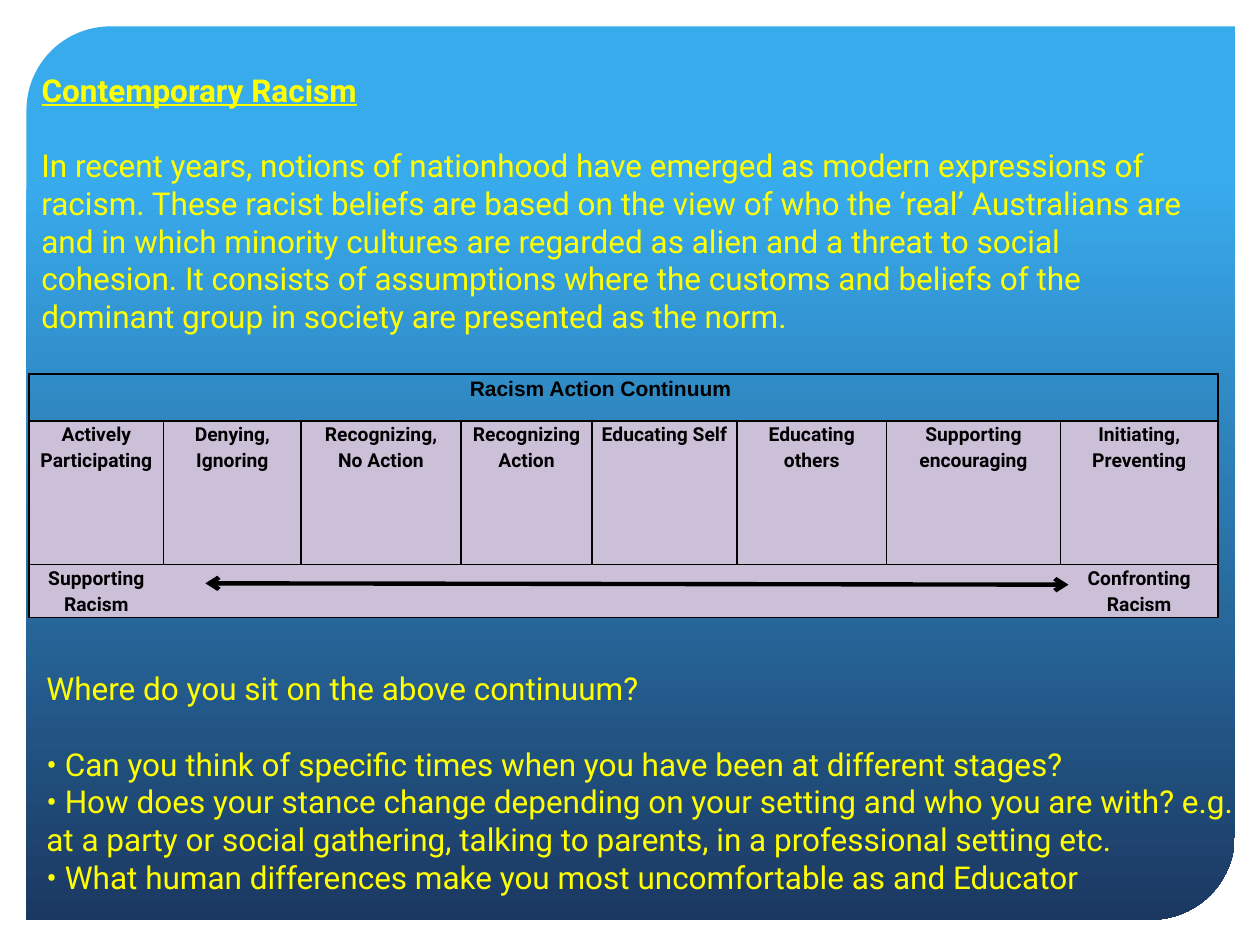
from lxml.etree import SubElement
from pptx import Presentation
from pptx.dml.color import RGBColor
from pptx.enum.shapes import MSO_CONNECTOR, MSO_SHAPE
from pptx.enum.text import MSO_ANCHOR, MSO_AUTO_SIZE, PP_ALIGN
from pptx.oxml.ns import qn
from pptx.util import Inches, Pt

COLORS = {"top": "38ABED", "bottom": "1B3861", "text": "FFFF00",
          "cell": "CCC0D9", "ink": "000000"}
WIDTH, HEIGHT = Inches(10), Inches(7.5)
NO_STYLE = "{2D5ABB26-0587-4C30-8999-92F81FD0307C}"

INTRO = ["In recent years, notions of nationhood have emerged as modern expressions of "
         "racism. These racist beliefs are based on the view of who the ‘real’ Australians "
         "are and in which minority cultures are regarded as alien and a threat to social "
         "cohesion. It consists of assumptions where the customs and beliefs of the "
         "dominant group in society are presented as the norm."]
QUESTIONS = ["Where do you sit on the above continuum?",
             "• Can you think of specific times when you have been at different stages?",
             "• How does your stance change depending on your setting and who you are with? "
             "e.g. at a party or social gathering, talking to parents, in a professional "
             "setting etc.",
             "• What human differences make you most uncomfortable as and Educator"]

# Column widths and row heights, in percent of the slide
COLUMNS = [10.7, 10.9, 12.7, 10.4, 9.1, 2.4, 1.4, 3.7, 6.4, 13.8, 12.5]
ROWS = [4.93, 15.2, 5.6]
# (first column, last column, text)
STAGES = [(0, 0, "Actively\nParticipating"), (1, 1, "Denying,\nIgnoring"),
          (2, 2, "Recognizing,\nNo Action"), (3, 3, "Recognizing Action"),
          (4, 5, "Educating Self"), (6, 8, "Educating others"),
          (9, 9, "Supporting encouraging"), (10, 10, "Initiating,\nPreventing")]


def color(name):
    return RGBColor.from_string(COLORS[name])


def px(share):
    """Percent of the slide width."""
    return round(WIDTH * share / 100)


def py(share):
    """Percent of the slide height."""
    return round(HEIGHT * share / 100)


def box(x, y, w, h):
    return px(x), py(y), px(w), py(h)


def style_runs(p, size, name, font="Roboto", bold=False, underline=False):
    for r in p.runs:
        r.font.size, r.font.name = Pt(size), font
        r.font.bold, r.font.underline = bold, underline
        r.font.color.rgb = color(name)


def add_panel(s):
    sp = s.shapes.add_shape(MSO_SHAPE.ROUND_2_DIAG_RECTANGLE, *box(2.1, 2.8, 95.9, 94.53))
    sp.adjustments[0], sp.adjustments[1] = 0.094, 0
    sp.shadow.inherit = False
    sp.line.fill.background()
    sp.fill.gradient()
    sp.fill.gradient_angle = 270
    for stop, position, name in zip(sp.fill.gradient_stops, (0.17, 1), ("top", "bottom")):
        stop.position = position
        stop.color.rgb = color(name)
    s.shapes._spTree.insert(2, sp._element)  # behind the title


def set_title(s, text):
    title = s.shapes.title
    title.left, title.top, title.width, title.height = box(2.3, 6.8, 94, 5.33)
    tf = title.text_frame
    tf.text = text
    tf.auto_size = MSO_AUTO_SIZE.NONE
    tf.vertical_anchor = MSO_ANCHOR.TOP
    tf.paragraphs[0].alignment = PP_ALIGN.LEFT
    style_runs(tf.paragraphs[0], 18, "text", bold=True, underline=True)


def add_text(s, place, lines):
    """Add a text box whose first paragraph is set apart by one line."""
    tf = s.shapes.add_textbox(*place).text_frame
    tf.word_wrap = True
    tf.text = "\n".join(lines)
    for p in tf.paragraphs:
        style_runs(p, 18, "text")
    for p in tf.paragraphs[1:2]:
        p.space_before = Pt(21.6)


def set_borders(cell, sides):
    tc_pr = cell._tc.get_or_add_tcPr()
    for side in sides:
        ln = SubElement(tc_pr, qn(f"a:ln{side}"), w=str(Pt(1)))
        fill = SubElement(ln, qn("a:solidFill"))
        SubElement(fill, qn("a:srgbClr"), val=COLORS["ink"])


def set_cell(cell, text, size=11, font="Roboto", align=PP_ALIGN.CENTER):
    cell.text = text
    for p in cell.text_frame.paragraphs:
        p.alignment, p.line_spacing = align, 1.15
        style_runs(p, size, "ink", font, bold=True)


def add_continuum(s):
    place = box(2.3, 39.6, sum(COLUMNS), sum(ROWS))
    table = s.shapes.add_table(len(ROWS), len(COLUMNS), *place).table
    table.first_row = table.horz_banding = False
    table._tbl.tblPr.find(qn("a:tableStyleId")).text = NO_STYLE
    for column, share in zip(table.columns, COLUMNS):
        column.width = px(share)
    for row, share in zip(table.rows, ROWS):
        row.height = py(share)

    last = len(COLUMNS) - 1
    starts = {first for first, _, _ in STAGES}
    ends = {end for _, end, _ in STAGES}
    for i in range(len(ROWS)):
        for j in range(len(COLUMNS)):
            cell = table.cell(i, j)
            cell.margin_left = cell.margin_right = Inches(0.07)
            cell.margin_top = cell.margin_bottom = 0
            left = j in starts if i == 1 else j == 0
            right = j in ends if i == 1 else j == last
            set_borders(cell, "L" * left + "R" * right + "TB")
            if i:
                cell.fill.solid()
                cell.fill.fore_color.rgb = color("cell")
            else:
                cell.fill.background()

    table.cell(0, 3).merge(table.cell(0, 6))
    set_cell(table.cell(0, 3), "Racism Action Continuum", 12, "Arial", PP_ALIGN.LEFT)
    for first, end, text in STAGES:
        if end > first:
            table.cell(1, first).merge(table.cell(1, end))
        set_cell(table.cell(1, first), text)
    set_cell(table.cell(2, 0), "Supporting Racism")
    set_cell(table.cell(2, last), "Confronting Racism")


def add_double_arrow(s, x1, y1, x2, y2):
    line = s.shapes.add_connector(MSO_CONNECTOR.STRAIGHT, px(x1), py(y1), px(x2), py(y2))
    line.line.color.rgb = color("ink")
    line.line.width = Pt(2.5)
    ln = line.line._get_or_add_ln()
    for end in ("a:headEnd", "a:tailEnd"):
        SubElement(ln, qn(end), type="arrow")
    SubElement(line._element.spPr, qn("a:effectLst"))


def main():
    prs = Presentation()
    prs.slide_width, prs.slide_height = WIDTH, HEIGHT
    s = prs.slides.add_slide(prs.slide_layouts[5])
    add_panel(s)
    set_title(s, "Contemporary Racism")
    add_text(s, box(2.3, 14.8, 94, 21.33), INTRO)
    add_continuum(s)
    add_double_arrow(s, 16.3, 61.73, 84.8, 61.87)
    add_text(s, box(2.7, 70.13, 97.3, 25.6), QUESTIONS)
    prs.save("out.pptx")


if __name__ == "__main__":
    main()
